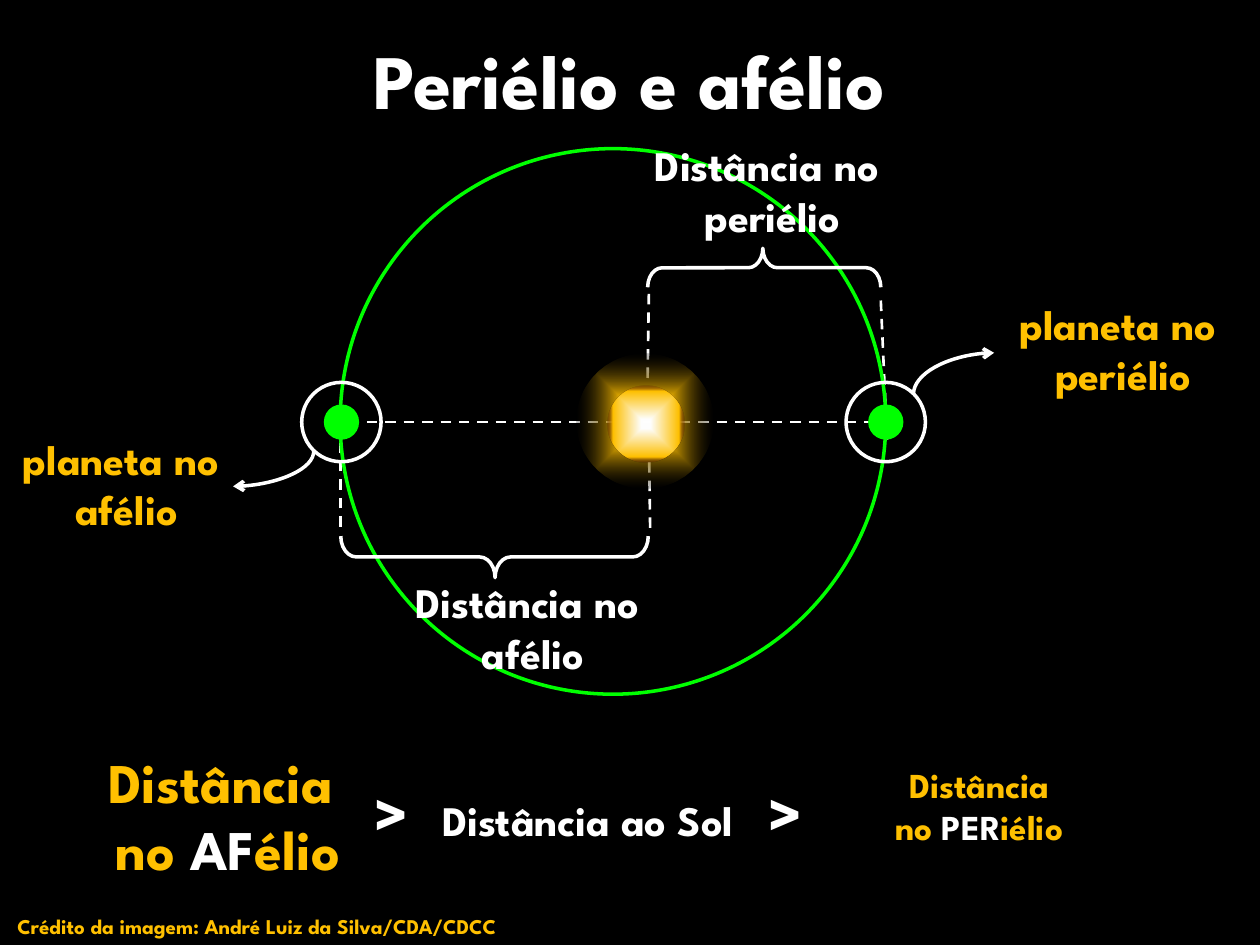
from typing import NamedTuple

from lxml import etree
from pptx import Presentation
from pptx.dml.color import RGBColor
from pptx.enum.dml import MSO_LINE
from pptx.enum.shapes import MSO_CONNECTOR, MSO_SHAPE
from pptx.enum.text import MSO_ANCHOR, MSO_AUTO_SIZE, PP_ALIGN
from pptx.oxml.ns import qn
from pptx.util import Emu, Inches, Pt

COLUMNS, ROWS = 100, 75
WIDTH, HEIGHT = Inches(10), Inches(7.5)
FONT = "League Spartan"
BLACK, WHITE, GREEN, GOLD = "000000", "FFFFFF", "00FF00", "FFC000"
STRAIGHT, CURVE = MSO_CONNECTOR.STRAIGHT, MSO_CONNECTOR.CURVE
OVAL, BRACE = MSO_SHAPE.OVAL, MSO_SHAPE.LEFT_BRACE
LEFT, CENTER = PP_ALIGN.LEFT, PP_ALIGN.CENTER
DASH = MSO_LINE.DASH
TITLE_ONLY = 5


class Box(NamedTuple):
    """Left, top, width and height in grid columns and rows."""
    left: float
    top: float
    width: float
    height: float

    def lengths(self):
        return (column(self.left), row(self.top),
                column(self.width), row(self.height))


class Run(NamedTuple):
    text: str
    color: str


class Label(NamedTuple):
    box: Box
    size: float
    lines: list
    alignment: PP_ALIGN = CENTER


class Brace(NamedTuple):
    box: Box
    rotation: float
    tip: float


class Arrow(NamedTuple):
    begin: tuple
    end: tuple
    rotation: int


class Planet(NamedTuple):
    center: float
    arrow: Arrow


class Glow(NamedTuple):
    box: Box
    stops: list  # position %, colour, opacity %


AXIS = 33.5
APHELION, SUN, PERIHELION = 27.1, 51.5, 70.3

GUIDES = [
    ((27, 41.8), (27, AXIS)),
    ((51.6, 41.9), (51.5, 34.7)),
    ((51.4, 30), (51.5, 23)),
    ((70.4, 34.9), (69.9, 23.7)),
    ((26.2, AXIS), (71.3, AXIS)),
]
BRACES = [
    Brace(Box(59.1, 12, 3.1, 18.5), 90, 0.506),
    Brace(Box(37.6, 32, 3.3, 24.4), 270, 0.502),
]
PLANETS = [
    Planet(APHELION, Arrow((24.9, 35.8), (18.5, 38.6), 90)),
    Planet(PERIHELION, Arrow((72.5, 31.3), (78.9, 28), 270)),
]
GLOWS = [
    Glow(Box(45.8, 28.1, 10.8, 10.7),
         [(7, WHITE, 100), (32, GOLD, 100), (100, BLACK, 23)]),
    Glow(Box(48.2, 30.6, 6.1, 6.1),
         [(12, WHITE, 100), (85, GOLD, 100), (100, "4D0808", 17)]),
]
LABELS = [
    Label(Box(45.9, 10.6, 30.8, 9.1), 24,
          [[Run("Distância no ", WHITE)], [Run("periélio", WHITE)]]),
    Label(Box(26.9, 45.3, 30.8, 9.1), 24,
          [[Run("Distância no ", WHITE)], [Run("afélio", WHITE)]]),
    Label(Box(76.3, 23.2, 25.7, 9.1), 24,
          [[Run("planeta no ", GOLD)], [Run("periélio", GOLD)]]),
    Label(Box(-2.8, 33.9, 25.7, 9.1), 24,
          [[Run("planeta no ", GOLD)], [Run("afélio", GOLD)]]),
    Label(Box(66.6, 60.1, 23, 7.7), 20,
          [[Run("Distância ", GOLD)],
           [Run("no ", GOLD), Run("PER", WHITE), Run("iélio ", GOLD)]]),
    Label(Box(6.7, 58.8, 22.8, 11.8), 32,
          [[Run("Distância ", GOLD)],
           [Run("no ", GOLD), Run("AF", WHITE), Run("élio", GOLD)]]),
    Label(Box(0.4, 72, 52.8, 3), 12,
          [[Run("Crédito da imagem: André Luiz da Silva/CDA/CDCC", GOLD)]],
          LEFT),
]
TITLE = Label(Box(7.5, 2.1, 85, 16.1), 44, [[Run("Periélio e afélio", WHITE)]])
COMPARISON = Label(Box(28.7, 60.9, 42.5, 7.1), 36,
                   [[Run(">\t", WHITE), Run("Distância ao Sol", WHITE),
                     Run("\t>", WHITE)]], LEFT)
COMPARISON_TABS = (5.4, 31.3)


def column(count: float) -> Emu:
    return Emu(round(WIDTH * count / COLUMNS))


def row(count: float) -> Emu:
    return Emu(round(HEIGHT * count / ROWS))


def rgb(color: str) -> RGBColor:
    return RGBColor.from_string(color)


def circle(column_center: float, diameter: float) -> Box:
    """Box of a circle centred on the orbit's axis."""
    return Box(column_center - diameter / 2, AXIS - diameter / 2,
               diameter, diameter)


def set_line(line, width: float, color: str = WHITE) -> None:
    line.color.rgb = rgb(color)
    line.width = Pt(width)


def add_outline(slide, kind, box: Box, color: str = WHITE):
    shape = slide.shapes.add_shape(kind, *box.lengths())
    shape.shadow.inherit = False
    shape.fill.background()
    set_line(shape.line, 2, color)
    return shape


def add_connector(slide, kind, begin: tuple, end: tuple, width: float):
    connector = slide.shapes.add_connector(
        kind, column(begin[0]), row(begin[1]), column(end[0]), row(end[1]))
    set_line(connector.line, width)
    etree.SubElement(connector._element.spPr, qn("a:effectLst"))
    return connector


def add_arrow(slide, arrow: Arrow) -> None:
    """Quarter curve; its unrotated frame swaps the width and height."""
    (x1, y1), (x2, y2) = arrow.begin, arrow.end
    middle_x, middle_y = (x1 + x2) / 2, (y1 + y2) / 2
    half_width, half_height = abs(y2 - y1) / 2, abs(x2 - x1) / 2
    connector = add_connector(
        slide, CURVE, (middle_x - half_width, middle_y - half_height),
        (middle_x + half_width, middle_y + half_height), 2)
    properties = connector._element.spPr
    properties.find(qn("a:xfrm")).set("rot", str(arrow.rotation * 60000))
    properties.find(qn("a:prstGeom")).set("prst", "curvedConnector2")
    etree.SubElement(properties.find(qn("a:ln")), qn("a:tailEnd"), type="arrow")


def add_glow(group, glow: Glow) -> None:
    shape = group.shapes.add_shape(OVAL, *glow.box.lengths())
    shape.shadow.inherit = False
    shape.line.fill.background()
    shape.fill.background()
    gradient = etree.Element(qn("a:gradFill"), rotWithShape="1")
    stops = etree.SubElement(gradient, qn("a:gsLst"))
    for position, color, opacity in glow.stops:
        stop = etree.SubElement(stops, qn("a:gs"), pos=str(position * 1000))
        value = etree.SubElement(stop, qn("a:srgbClr"), val=color)
        if opacity < 100:
            etree.SubElement(value, qn("a:alpha"), val=str(opacity * 1000))
    path = etree.SubElement(gradient, qn("a:path"), path="shape")
    etree.SubElement(path, qn("a:fillToRect"),
                     dict.fromkeys("ltrb", "50000"))
    properties = shape._element.spPr
    properties.replace(properties.find(qn("a:noFill")), gradient)


def write_label(shape, label: Label):
    shape.left, shape.top, shape.width, shape.height = label.box.lengths()
    frame = shape.text_frame
    frame_format = {"word_wrap": True, "auto_size": MSO_AUTO_SIZE.NONE,
                    "vertical_anchor": MSO_ANCHOR.TOP}
    for name, value in frame_format.items():
        setattr(frame, name, value)
    for index, line in enumerate(label.lines):
        paragraph = frame.add_paragraph() if index else frame.paragraphs[0]
        paragraph.alignment = label.alignment
        for text, color in line:
            run = paragraph.add_run()
            run.text = text
            font_format = {"name": FONT, "size": Pt(label.size), "bold": True}
            for name, value in font_format.items():
                setattr(run.font, name, value)
            run.font.color.rgb = rgb(color)
    return frame


def add_label(slide, label: Label):
    return write_label(slide.shapes.add_textbox(*label.box.lengths()), label)


def add_comparison(slide) -> None:
    paragraph = add_label(slide, COMPARISON).paragraphs[0]
    paragraph.runs[1].font.size = Pt(24)
    tabs = etree.SubElement(paragraph._p.get_or_add_pPr(), qn("a:tabLst"))
    for position in COMPARISON_TABS:
        etree.SubElement(tabs, qn("a:tab"), pos=str(column(position)), algn="l")


def main() -> None:
    presentation = Presentation()
    presentation.slide_width, presentation.slide_height = WIDTH, HEIGHT
    slide = presentation.slides.add_slide(presentation.slide_layouts[TITLE_ONLY])
    slide.background.fill.solid()
    slide.background.fill.fore_color.rgb = rgb(BLACK)
    write_label(slide.shapes.title, TITLE)

    for begin, end in GUIDES:
        add_connector(slide, STRAIGHT, begin, end, 1.5).line.dash_style = DASH
    add_outline(slide, OVAL, Box(27, 11.8, 43.3, 43.3), GREEN)
    for brace in BRACES:
        shape = add_outline(slide, BRACE, brace.box)
        shape.rotation = brace.rotation
        shape.adjustments[0], shape.adjustments[1] = 0.373, brace.tip
    for planet in PLANETS:
        disc = add_outline(slide, OVAL, circle(planet.center, 2.8), GREEN)
        disc.fill.solid()
        disc.fill.fore_color.rgb = rgb(GREEN)
        disc.line.fill.background()
        add_outline(slide, OVAL, circle(planet.center, 6.3))
        add_arrow(slide, planet.arrow)
    sun = slide.shapes.add_group_shape()
    for glow in GLOWS:
        add_glow(sun, glow)
    for label in LABELS:
        add_label(slide, label)
    add_comparison(slide)
    presentation.save("out.pptx")


if __name__ == "__main__":
    main()
